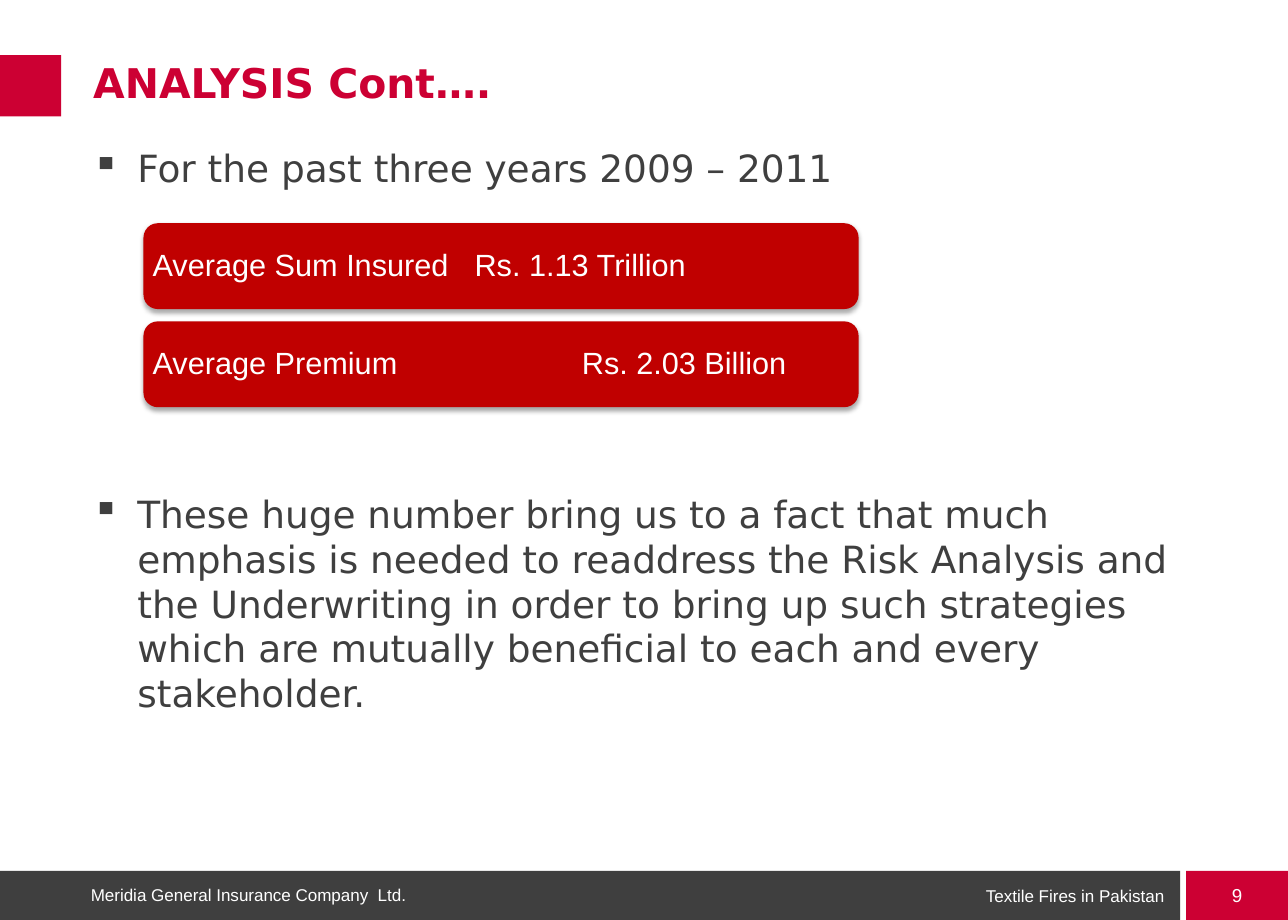
from dataclasses import dataclass

from lxml import etree
from pptx import Presentation
from pptx import util as u
from pptx.dml.color import RGBColor
from pptx.enum import shapes, text
from pptx.oxml import ns

CELL = 0.25  # grid unit in inches: 42 columns by 30 rows
COLS, ROWS = 42, 30


@dataclass(frozen=True)
class Theme:
    red: str = "CC0033"
    deep: str = "C00000"
    dark: str = "3F3F3F"
    white: str = "FFFFFF"
    head: str = "DejaVu Sans"
    sans: str = "Arial"
    title: int = 24
    body: int = 22
    bar: int = 18
    page: int = 11
    foot: int = 10


T = Theme()
LEFT, MID, RIGHT = text.PP_ALIGN.LEFT, text.PP_ALIGN.CENTER, text.PP_ALIGN.RIGHT


def grid(n):
    return u.Inches(n * CELL)


def sub(node, tag, **attrs):
    """Append a drawing element with its attributes."""
    child = etree.SubElement(node, ns.qn(tag))
    for key, val in attrs.items():
        child.set(key, str(val))
    return child


def write(shape, words, size, color, font=T.sans, align=LEFT, bold=False, inset=0, top=False):
    frame = shape.text_frame
    frame.word_wrap = True
    frame.vertical_anchor = text.MSO_ANCHOR.TOP if top else text.MSO_ANCHOR.MIDDLE
    frame.margin_left = frame.margin_right = u.Inches(inset)
    frame.margin_top = frame.margin_bottom = 0
    para = frame.paragraphs[0]
    para.text = words
    para.alignment = align
    para.font.name, para.font.size, para.font.bold = font, u.Pt(size), bold
    para.font.color.rgb = RGBColor.from_string(color)
    return para


def block(slide, area, color, kind=shapes.MSO_SHAPE.RECTANGLE):
    shape = slide.shapes.add_shape(kind, *map(grid, area))
    shape.shadow.inherit = False
    shape.fill.solid()
    shape.fill.fore_color.rgb = RGBColor.from_string(color)
    shape.line.fill.background()
    return shape


def label(slide, area, words, size, color, **style):
    return write(slide.shapes.add_textbox(*map(grid, area)), words, size, color, **style)


def bullet(slide, area, words):
    para = label(slide, area, words, T.body, T.dark, font=T.head, top=True)
    props = para._p.get_or_add_pPr()
    hang = u.Inches(0.37)
    props.set("marL", str(hang))
    props.set("indent", str(-hang))
    sub(props, "a:buChar", char="▪")


def figure(slide, area, name, value, stop):
    """Rounded bar with a soft shadow; the value sits at a tab stop."""
    bar = block(slide, area, T.deep, shapes.MSO_SHAPE.ROUNDED_RECTANGLE)
    glow = sub(bar._element.spPr.find(ns.qn("a:effectLst")), "a:outerShdw",
               blurRad=u.Pt(3.1), dist=u.Pt(1.8), dir=5400000, rotWithShape=0)
    sub(sub(glow, "a:srgbClr", val="000000"), "a:alpha", val=35000)
    para = write(bar, f"{name}\t{value}", T.bar, T.white, inset=0.04)
    para.line_spacing = 0.9
    tabs = sub(para._p.get_or_add_pPr(), "a:tabLst")
    sub(tabs, "a:tab", pos=grid(stop), algn="l")


def footer(slide):
    top, high = 28.4, 1.6
    block(slide, (0, top, 38.48, high), T.dark)
    page = block(slide, (38.68, top, COLS - 38.68, high), T.red)
    write(page, "9", T.page, T.white, align=MID)
    label(slide, (2.96, 28.32, 16.76, 1.68), "Meridia General Insurance Company  Ltd.",
          T.foot, T.white)
    label(slide, (21.2, 28.36, 16.76, 1.68), "Textile Fires in Pakistan",
          T.foot, T.white, align=RIGHT)


def main():
    deck = Presentation()
    deck.slide_width, deck.slide_height = grid(COLS), grid(ROWS)
    slide = deck.slides.add_slide(deck.slide_layouts[6])

    # Heading
    block(slide, (0, 1.8, 2, 2), T.red)
    title = label(slide, (3.04, 1.84, 36.44, 1.88), "ANALYSIS Cont….",
                  T.title, T.red, font=T.head, bold=True)
    title.line_spacing = 0.9

    # Points
    bullet(slide, (3, 4.72, 36.48, 1.6), "For the past three years 2009 – 2011")
    bullet(slide, (3, 16, 36.48, 8),
           "These huge number bring us to a fact that much emphasis is needed to "
           "readdress the Risk Analysis and the Underwriting in order to bring up such "
           "strategies which are mutually beneficial to each and every stakeholder.")

    # Key figures
    figures = [("Average Sum Insured ", "Rs. 1.13 Trillion", 10.5),
               ("Average Premium", "Rs. 2.03 Billion", 14)]
    for row, item in enumerate(figures):
        figure(slide, (4.68, 7.28 + 3.2 * row, 23.32, 2.8), *item)

    footer(slide)
    deck.save("out.pptx")


if __name__ == "__main__":
    main()
